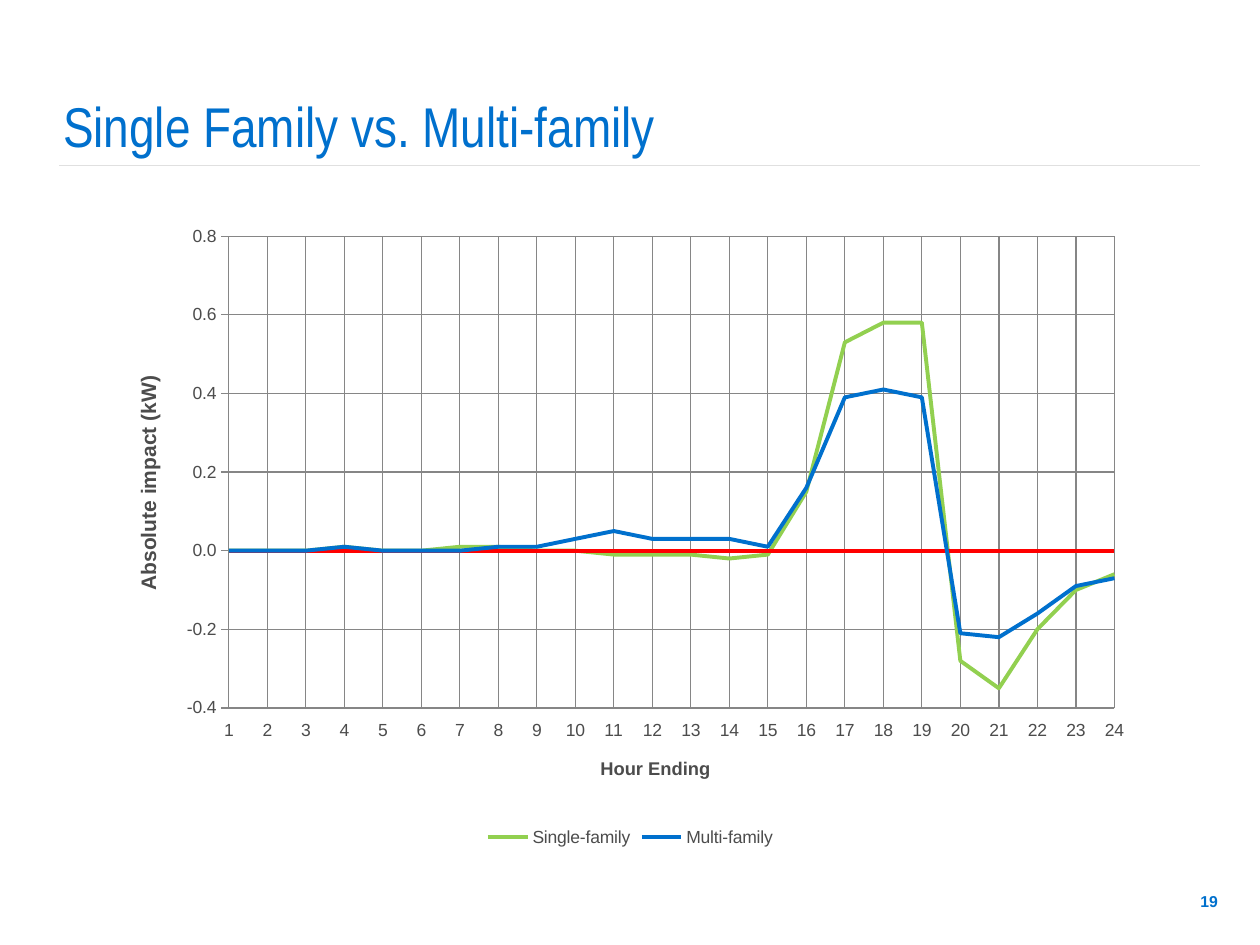
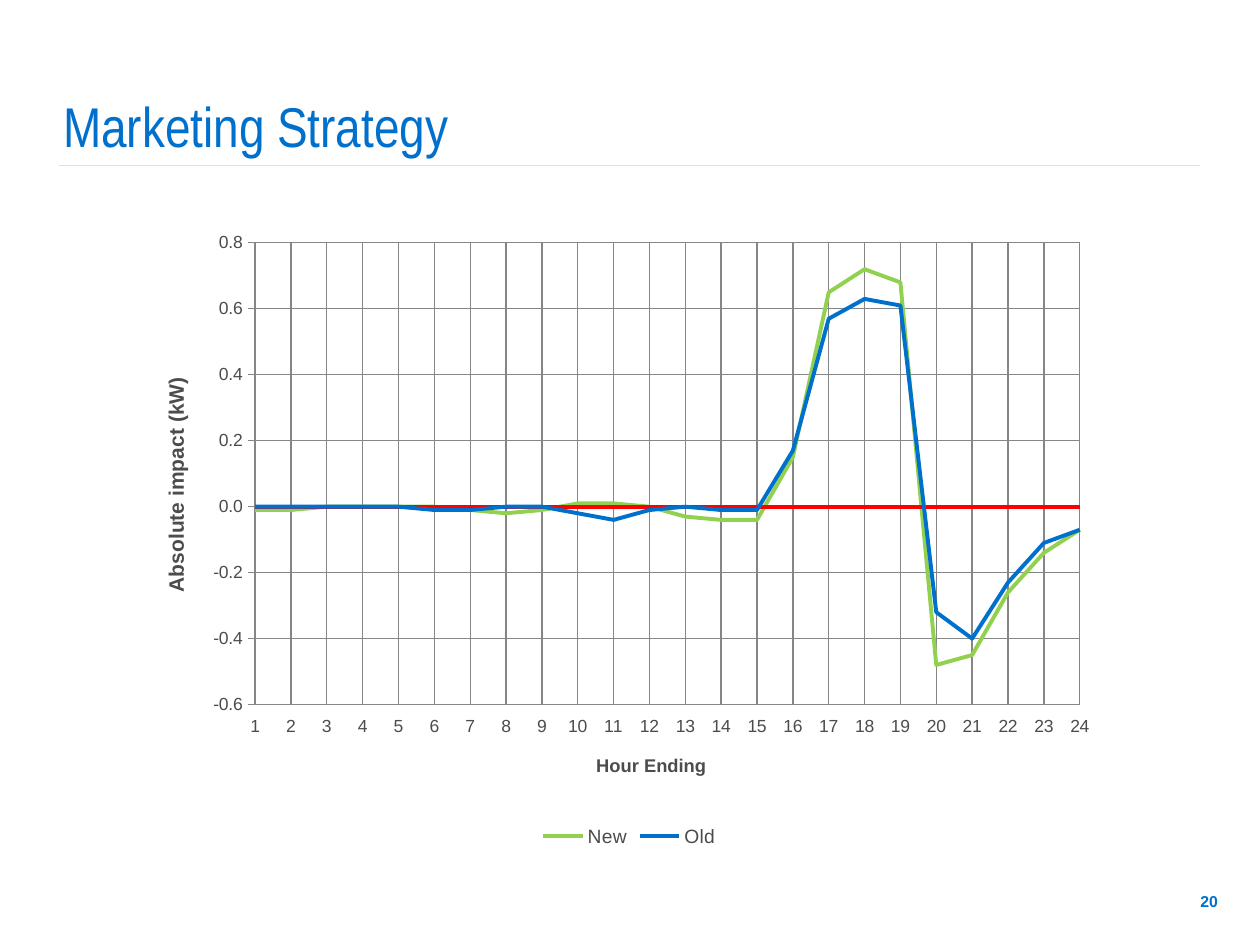
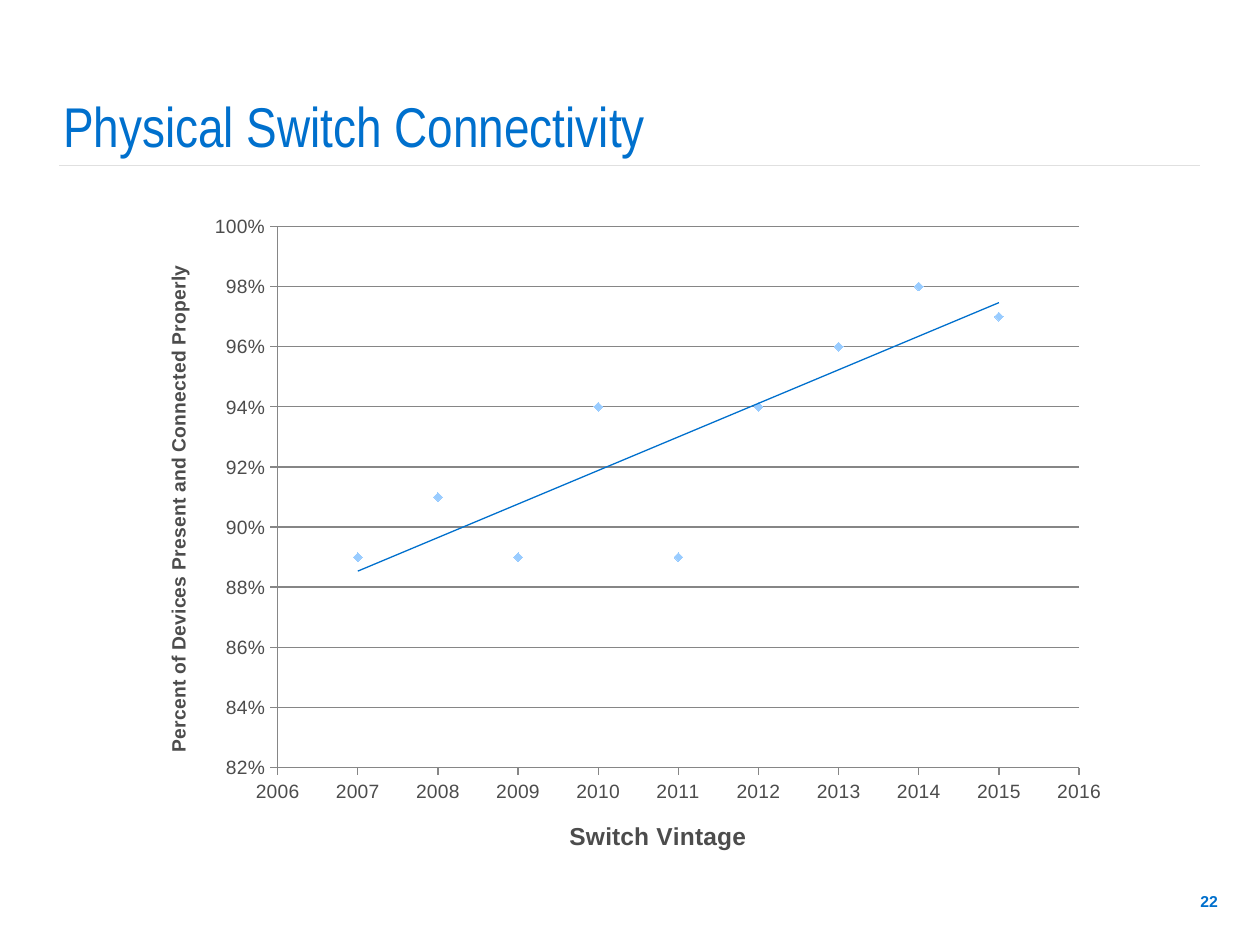
from lxml import etree
from pptx import Presentation
from pptx.chart.data import CategoryChartData, XyChartData
from pptx.dml.color import RGBColor
from pptx.enum.chart import (XL_CHART_TYPE, XL_LEGEND_POSITION, XL_MARKER_STYLE,
                             XL_TICK_LABEL_POSITION, XL_TICK_MARK)
from pptx.enum.shapes import MSO_CONNECTOR
from pptx.enum.text import MSO_ANCHOR, PP_ALIGN
from pptx.oxml.ns import qn
from pptx.util import Pt

LINE = XL_CHART_TYPE.LINE
SCATTER = XL_CHART_TYPE.XY_SCATTER
BOTTOM_LEGEND = XL_LEGEND_POSITION.BOTTOM
DIAMOND = XL_MARKER_STYLE.DIAMOND
NO_MARKER = XL_MARKER_STYLE.NONE
LOW = XL_TICK_LABEL_POSITION.LOW
OUTSIDE = XL_TICK_MARK.OUTSIDE
NO_TICK = XL_TICK_MARK.NONE
STRAIGHT = MSO_CONNECTOR.STRAIGHT
MIDDLE, BOTTOM = MSO_ANCHOR.MIDDLE, MSO_ANCHOR.BOTTOM
LEFT, RIGHT = PP_ALIGN.LEFT, PP_ALIGN.RIGHT

BLUE, GREEN, RED, SKY = "0070CD", "92D050", "FF0000", "99CCFF"
TEXT, GRID, RULE = "4C4C4C", "868686", "E0E0E0"
BODY_FONT, TITLE_FONT = "Arial", "Arial Narrow"
HOURS = range(1, 25)

SINGLE_FAMILY = [0, 0, 0, 0.01, 0, 0, 0.01, 0.01, 0, 0, -0.01, -0.01, -0.01, -0.02, -0.01, 0.15,
                 0.53, 0.58, 0.58, -0.28, -0.35, -0.2, -0.1, -0.06]
MULTI_FAMILY = [0, 0, 0, 0.01, 0, 0, 0, 0.01, 0.01, 0.03, 0.05, 0.03, 0.03, 0.03, 0.01, 0.16,
                0.39, 0.41, 0.39, -0.21, -0.22, -0.16, -0.09, -0.07]
NEW = [-0.01, -0.01, 0, 0, 0, 0, -0.01, -0.02, -0.01, 0.01, 0.01, 0, -0.03, -0.04, -0.04, 0.15,
       0.65, 0.72, 0.68, -0.48, -0.45, -0.26, -0.14, -0.07]
OLD = [0, 0, 0, 0, 0, -0.01, -0.01, 0, 0, -0.02, -0.04, -0.01, 0, -0.01, -0.01, 0.17,
       0.57, 0.63, 0.61, -0.32, -0.4, -0.23, -0.11, -0.07]
CONNECTED = [0.89, 0.91, 0.89, 0.94, 0.89, 0.94, 0.96, 0.98, 0.97]


def rgb(color):
    return RGBColor.from_string(color)


def element(tag, parent=None, **attrs):
    el = etree.Element(qn(tag)) if parent is None else etree.SubElement(parent, qn(tag))
    for name, value in attrs.items():
        el.set(name, str(value))
    return el


class Deck:
    def __init__(self):
        self.prs = Presentation()
        self.prs.slide_width, self.prs.slide_height = Pt(720), Pt(540)
        self.s = None

    def slide(self, title, number):
        self.s = self.prs.slides.add_slide(self.prs.slide_layouts[6])
        self.rule(34, 94.4, 685.5)
        self.text(number, (656, 500.5, 47, 29), BODY_FONT, 9, True, RIGHT, MIDDLE, 7.2)
        self.text(title, (36, 41, 649, 53.5), TITLE_FONT, 32, False, LEFT, BOTTOM, 0)

    def rule(self, left, top, right):
        line = self.s.shapes.add_connector(STRAIGHT, Pt(left), Pt(top), Pt(right), Pt(top))
        line.line.color.rgb = rgb(RULE)
        line.line.width = Pt(0.75)
        element("a:effectLst", line._element.spPr)

    def text(self, text, box, font, size, bold, align, anchor, inset):
        tf = self.s.shapes.add_textbox(*map(Pt, box)).text_frame
        tf.word_wrap = True
        tf.vertical_anchor = anchor
        tf.margin_left = Pt(inset)
        p = tf.paragraphs[0]
        p.text = text
        p.alignment = align
        self.font(p.font, size, bold, BLUE, font)

    def font(self, font, size, bold=False, color=TEXT, name=BODY_FONT):
        font.name, font.size, font.bold = name, Pt(size), bold
        font.color.rgb = rgb(color)

    def chart(self, kind, box, data, plot):
        chart = self.s.shapes.add_chart(kind, *map(Pt, box), data).chart
        chart.has_title = chart.has_legend = False
        self.font(chart.font, 10)
        chart.plots[0].vary_by_categories = False
        area = chart._chartSpace.find(".//" + qn("c:plotArea"))
        for old in area.findall(qn("c:layout")):
            area.remove(old)
        layout = element("c:layout")
        area.insert(0, layout)
        manual = element("c:manualLayout", layout)
        element("c:layoutTarget", manual, val="inner")
        for tag in ("c:xMode", "c:yMode"):
            element(tag, manual, val="edge")
        for tag, value in zip("xywh", plot):
            element("c:" + tag, manual, val=value)
        return chart

    def axis(self, axis, title, title_size, size, grid=True, scale=None, fmt=None):
        axis.has_title = True
        p = axis.axis_title.text_frame.paragraphs[0]
        p.text = title
        self.font(p.font, title_size, True)
        self.font(axis.tick_labels.font, size)
        axis.major_tick_mark, axis.minor_tick_mark = OUTSIDE, NO_TICK
        axis.has_major_gridlines = grid
        lines = [axis.format.line]
        if grid:
            lines.append(axis.major_gridlines.format.line)
        for line in lines:
            line.color.rgb = rgb(GRID)
            line.width = Pt(0.75)
        if scale:
            axis.minimum_scale, axis.maximum_scale, axis.major_unit = scale
        if fmt:
            axis.tick_labels.number_format = fmt
            axis.tick_labels.number_format_is_linked = False

    def impact_chart(self, box, plot, series, low, legend_size):
        data = CategoryChartData(number_format="0.00")
        data.categories = [str(hour) for hour in HOURS]
        (first, first_values), (second, second_values) = series
        data.add_series(first, first_values)
        data.add_series("Series 2", [0] * len(HOURS))
        data.add_series(second, second_values)
        chart = self.chart(LINE, box, data, plot)
        for ser, color in zip(chart.series, (GREEN, RED, BLUE)):
            ser.smooth = False
            ser.marker.style = NO_MARKER
            ser.format.line.color.rgb = rgb(color)
            ser.format.line.width = Pt(2.25)
        self.axis(chart.category_axis, "Hour Ending", 10.5, 10)
        chart.category_axis.tick_label_position = LOW
        self.axis(chart.value_axis, "Absolute impact (kW)", 12, 10,
                  scale=(low, 0.8, 0.2), fmt="0.0")
        self.start_on_axis(chart.value_axis._element)
        self.legend(chart, legend_size, hidden=1)

    def start_on_axis(self, val_ax):
        cross = val_ax.find(qn("c:crossBetween"))
        if cross is None:
            cross = element("c:crossBetween")
            val_ax.find(qn("c:crosses")).addnext(cross)
        cross.set("val", "midCat")

    def legend(self, chart, size, hidden):
        chart.has_legend = True
        chart.legend.position = BOTTOM_LEGEND
        chart.legend.include_in_layout = False
        self.font(chart.legend.font, size)
        entry = element("c:legendEntry")
        element("c:idx", entry, val=hidden)
        element("c:delete", entry, val=1)
        chart.legend._element.find(qn("c:legendPos")).addnext(entry)

    def trend_chart(self, box, plot, first_year, values):
        data = XyChartData(number_format="General")
        points = data.add_series("Series 1")
        for year, value in enumerate(values, first_year):
            points.add_data_point(year, value)
        chart = self.chart(SCATTER, box, data, plot)
        ser = chart.series[0]
        ser.format.line.fill.background()
        ser.marker.style, ser.marker.size = DIAMOND, 5
        ser.marker.format.fill.solid()
        ser.marker.format.fill.fore_color.rgb = rgb(SKY)
        ser.marker.format.line.fill.background()
        self.trendline(ser)
        self.axis(chart.category_axis, "Switch Vintage", 14, 11, False, (2006, 2016, 1), "0")
        self.axis(chart.value_axis, "Percent of Devices Present and Connected Properly", 11, 11,
                  scale=(0.82, 1, 0.02), fmt="0%")

    def trendline(self, ser):
        trend = element("c:trendline")
        line = element("a:ln", element("c:spPr", trend), w=Pt(0.75))
        element("a:srgbClr", element("a:solidFill", line), val=BLUE)
        element("c:trendlineType", trend, val="linear")
        for tag in ("c:dispRSqr", "c:dispEq"):
            element(tag, trend, val=0)
        ser._element.find(qn("c:xVal")).addprevious(trend)


def main():
    deck = Deck()
    deck.slide("Single Family vs. Multi-family", "19")
    deck.impact_chart((66, 112.5, 588.5, 374.5), (0.11, 0.06, 0.86, 0.72),
                      (("Single-family", SINGLE_FAMILY), ("Multi-family", MULTI_FAMILY)),
                      -0.4, 10)
    deck.slide("Marketing Strategy", "20")
    deck.impact_chart((85.5, 120.5, 548, 366.5), (0.11, 0.05, 0.86, 0.72),
                      (("New", NEW), ("Old", OLD)), -0.6, 11)
    deck.slide("Physical Switch Connectivity", "22")
    deck.trend_chart((80.5, 114, 558.5, 386.5), (0.14, 0.04, 0.82, 0.8), 2007, CONNECTED)
    deck.prs.save("out.pptx")


if __name__ == "__main__":
    main()
